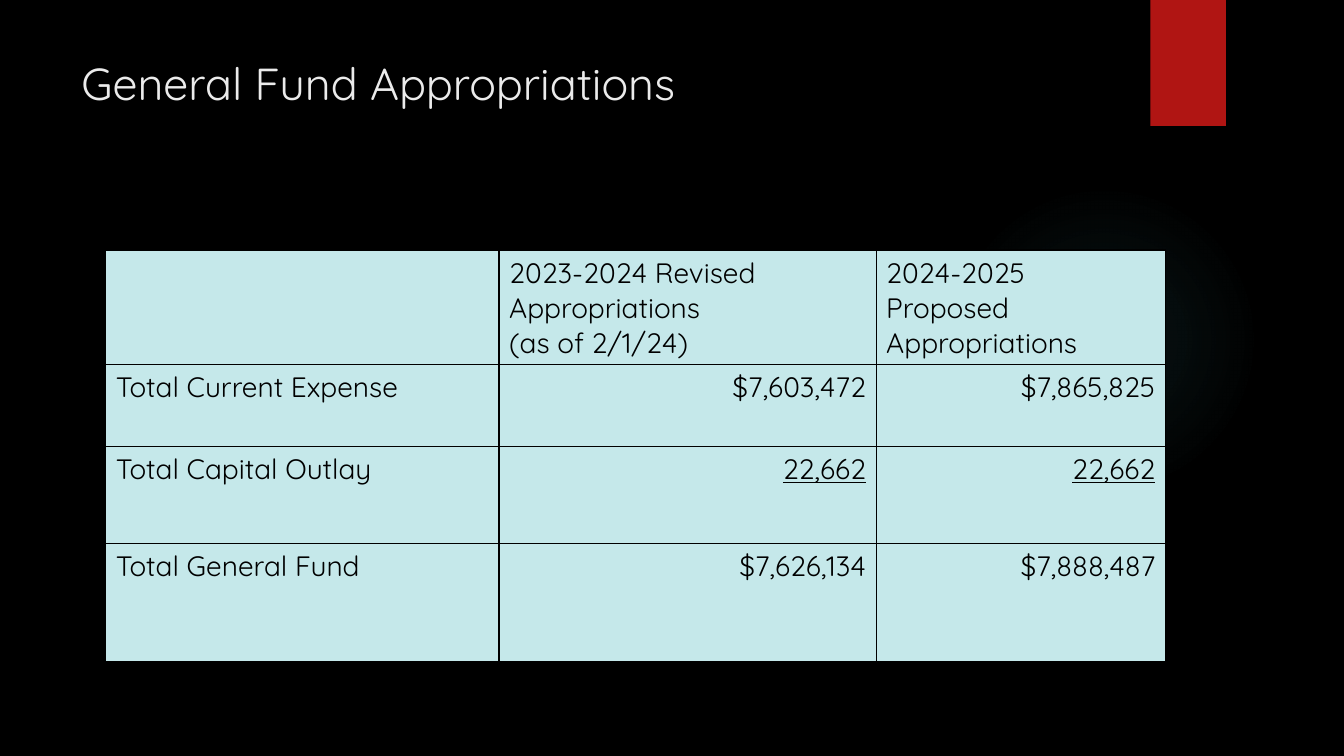
from pptx import Presentation
from pptx.dml.color import RGBColor
from pptx.enum.shapes import MSO_SHAPE
from pptx.enum.text import PP_ALIGN
from pptx.oxml import parse_xml
from pptx.oxml.ns import nsdecls
from pptx.util import Inches, Pt


def paint(fill, color):
    fill.solid()
    fill.fore_color.rgb = RGBColor.from_string(color)


def style(para, size, color):
    for run in para.runs:
        run.font.name = "Quicksand"
        run.font.size = Pt(size)
        paint(run.font.fill, color)


deck = Presentation()
deck.slide_width = Inches(13.33)
deck.slide_height = Inches(7.5)
slide = deck.slides.add_slide(deck.slide_layouts[6])
paint(slide.background.fill, "000000")

glow = slide.shapes.add_shape(
    MSO_SHAPE.OVAL, Inches(9.41), Inches(1.83), Inches(3.08), Inches(3.08))
glow.shadow.inherit = False
glow.line.fill.background()
glow.fill.background()
stops = "".join(
    f'<a:gs pos="{pos * 1000}"><a:srgbClr val="50B9C1">'
    f'<a:alpha val="{alpha * 1000}"/></a:srgbClr></a:gs>'
    for pos, alpha in [(0, 7), (36, 6), (69, 0)])
blend = parse_xml(
    f'<a:gradFill {nsdecls("a")}><a:gsLst>{stops}</a:gsLst><a:path path="circle">'
    '<a:fillToRect l="50000" t="50000" r="50000" b="50000"/></a:path></a:gradFill>')
props = glow._element.spPr
props.replace(props.find("{*}noFill"), blend)

tab = slide.shapes.add_shape(
    MSO_SHAPE.RECTANGLE, Inches(11.41), 0, Inches(0.75), Inches(1.25))
tab.shadow.inherit = False
tab.line.fill.background()
paint(tab.fill, "B01513")

title = slide.shapes.add_textbox(Inches(0.71), Inches(0.5), Inches(10.29), Inches(1.53))
title.text_frame.word_wrap = True
title.text_frame.text = "General Fund Appropriations"
style(title.text_frame.paragraphs[0], 32, "EBEBEB")

rows = [
    ("", "2023-2024 Revised Appropriations\n(as of 2/1/24)", "2024-2025 Proposed Appropriations"),
    ("Total Current Expense", "$7,603,472", "$7,865,825"),
    ("Total Capital Outlay", "22,662", "22,662"),
    ("Total General Fund", "$7,626,134", "$7,888,487"),
]
widths = [3.9, 3.74, 2.87]
heights = [1.14, 0.81, 0.96, 1.17]
table = slide.shapes.add_table(
    len(rows), len(widths), Inches(1.05), Inches(2.48),
    Inches(sum(widths)), Inches(sum(heights))).table
for col, width in zip(table.columns, widths):
    col.width = Inches(width)
for row, height in zip(table.rows, heights):
    row.height = Inches(height)

for r, row in enumerate(rows):
    for c, text in enumerate(row):
        cell = table.cell(r, c)
        for side in "LRTB":
            cell._tc.get_or_add_tcPr().append(parse_xml(
                f'<a:ln{side} {nsdecls("a")} w="12700"><a:solidFill>'
                f'<a:srgbClr val="000000"/></a:solidFill></a:ln{side}>'))
        paint(cell.fill, "C5E8EA")
        cell.text_frame.text = text
        for para in cell.text_frame.paragraphs:
            style(para, 20, "000000")
            para.font.bold = False
            if r and c:
                para.alignment = PP_ALIGN.RIGHT
            for run in para.runs:
                run.font.bold = False
                run.font.underline = r == 2 and c > 0

deck.save("out.pptx")
